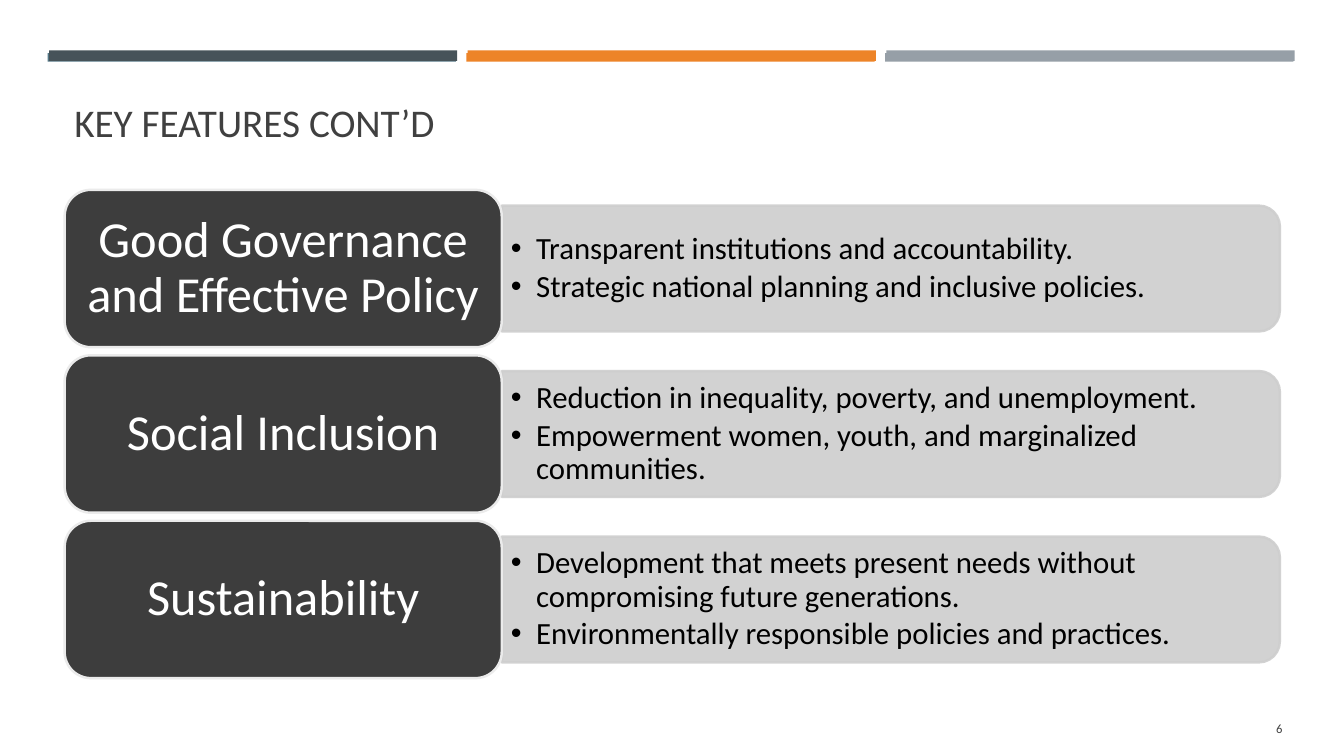
from dataclasses import dataclass

import lxml.etree
import pptx
import pptx.dml.color
import pptx.enum.shapes
import pptx.enum.text
import pptx.oxml.ns
import pptx.shapes.autoshape
import pptx.slide
import pptx.text.text
import pptx.util

Pt = pptx.util.Pt
RGBColor = pptx.dml.color.RGBColor
MSO_SHAPE = pptx.enum.shapes.MSO_SHAPE
PP_ALIGN = pptx.enum.text.PP_ALIGN
MSO_ANCHOR = pptx.enum.text.MSO_ANCHOR
qn = pptx.oxml.ns.qn

FONT = "Calibri"
TEAL = RGBColor(0x53, 0x76, 0x85)
SLATE = RGBColor(0x46, 0x53, 0x59)
ORANGE = RGBColor(0xED, 0x84, 0x28)
GREY = RGBColor(0x96, 0x9F, 0xA7)
INK = RGBColor(0x40, 0x40, 0x40)
CHARCOAL = RGBColor(0x3D, 0x3D, 0x3D)
PALE = RGBColor(0xEB, 0xEB, 0xEB)
SILVER = RGBColor(0xCE, 0xCE, 0xCE)
BLACK = RGBColor(0, 0, 0)
WHITE = RGBColor(255, 255, 255)

BAR_PITCH = 299.1
ROW_TOP = 135.6
ROW_PITCH = 118.2
ROW_HEIGHT = 112.4
LABEL_LEFT = 46.2
LABEL_WIDTH = 312.2
PANEL_LEFT = LABEL_LEFT + LABEL_WIDTH
PANEL_WIDTH = 555.8
PANEL_HEIGHT = 89.9
BULLETS_WIDTH = 551.5
BULLETS_HEIGHT = 81.4


@dataclass(frozen=True)
class Box:
    left: float
    top: float
    width: float
    height: float

    def emu(self) -> tuple[int, int, int, int]:
        return Pt(self.left), Pt(self.top), Pt(self.width), Pt(self.height)


@dataclass(frozen=True)
class Bar:
    back: RGBColor
    front: RGBColor


@dataclass(frozen=True)
class Feature:
    label: str
    bullets: tuple[str, ...]


BARS = (Bar(TEAL, SLATE), Bar(ORANGE, ORANGE), Bar(GREY, GREY))

FEATURES = (
    Feature("Good Governance and Effective Policy", (
        "Transparent institutions and accountability.",
        "Strategic national planning and inclusive policies.",
    )),
    Feature("Social Inclusion", (
        "Reduction in inequality, poverty, and unemployment.",
        "Empowerment women, youth, and marginalized communities.",
    )),
    Feature("Sustainability", (
        "Development that meets present needs without compromising future generations.",
        "Environmentally responsible policies and practices.",
    )),
)


def add_shape(s: pptx.slide.Slide, kind: MSO_SHAPE, box: Box, fill: RGBColor,
              line: RGBColor | None = None) -> pptx.shapes.autoshape.Shape:
    sp = s.shapes.add_shape(kind, *box.emu())
    sp.shadow.inherit = False
    sp.fill.solid()
    sp.fill.fore_color.rgb = fill
    if line is None:
        sp.line.fill.background()
    else:
        sp.line.color.rgb = line
        sp.line.width = Pt(1.75)
    return sp


def set_frame(tf: pptx.text.text.TextFrame, anchor: MSO_ANCHOR,
              inset_x: float = 7.2, inset_y: float = 3.6) -> None:
    tf.word_wrap = True
    tf.vertical_anchor = anchor
    tf.margin_left = tf.margin_right = Pt(inset_x)
    tf.margin_top = tf.margin_bottom = Pt(inset_y)


def add_run(p: pptx.text.text._Paragraph, text: str, size: float, color: RGBColor) -> None:
    r = p.add_run()
    r.text = text
    r.font.name = FONT
    r.font.size = Pt(size)
    r.font.color.rgb = color


def add_text(s: pptx.slide.Slide, box: Box, text: str, size: float,
             anchor: MSO_ANCHOR, align: PP_ALIGN) -> None:
    tf = s.shapes.add_textbox(*box.emu()).text_frame
    set_frame(tf, anchor)
    p = tf.paragraphs[0]
    p.alignment = align
    add_run(p, text, size, INK)


def add_bar(s: pptx.slide.Slide, index: int, bar: Bar) -> None:
    shift = index * BAR_PITCH
    add_shape(s, MSO_SHAPE.RECTANGLE, Box(34 + shift, 38, 291.6, 6), bar.back)
    add_shape(s, MSO_SHAPE.RECTANGLE, Box(35 + shift, 36, 291.6, 7.6), bar.front)


def add_panel(s: pptx.slide.Slide, middle: float) -> None:
    center = PANEL_LEFT + PANEL_WIDTH / 2
    box = Box(center - PANEL_HEIGHT / 2, middle - PANEL_WIDTH / 2, PANEL_HEIGHT, PANEL_WIDTH)
    sp = add_shape(s, MSO_SHAPE.ROUND_2_SAME_RECTANGLE, box, SILVER, SILVER)
    sp.rotation = 90
    for color in sp._element.spPr.iter(qn("a:srgbClr")):
        lxml.etree.SubElement(color, qn("a:alpha"), val="90000")


def add_bullets(s: pptx.slide.Slide, middle: float, bullets: tuple[str, ...]) -> None:
    box = Box(PANEL_LEFT, middle - BULLETS_HEIGHT / 2, BULLETS_WIDTH, BULLETS_HEIGHT)
    tf = s.shapes.add_textbox(*box.emu()).text_frame
    set_frame(tf, MSO_ANCHOR.MIDDLE, 6.6, 3.3)
    for i, text in enumerate(bullets):
        p = tf.paragraphs[0] if i == 0 else tf.add_paragraph()
        pPr = p._p.get_or_add_pPr()
        pPr.set("marL", str(Pt(18)))
        pPr.set("indent", str(-Pt(18)))
        lxml.etree.SubElement(pPr, qn("a:buFont"), typeface="Arial")
        lxml.etree.SubElement(pPr, qn("a:buChar"), char="•")
        p.line_spacing = 0.9
        p.space_after = Pt(3.3)
        add_run(p, text, 22, BLACK)


def add_label(s: pptx.slide.Slide, top: float, text: str) -> None:
    box = Box(LABEL_LEFT, top, LABEL_WIDTH, ROW_HEIGHT)
    sp = add_shape(s, MSO_SHAPE.ROUNDED_RECTANGLE, box, CHARCOAL, PALE)
    set_frame(sp.text_frame, MSO_ANCHOR.MIDDLE, 6, 5.4)
    p = sp.text_frame.paragraphs[0]
    p.alignment = PP_ALIGN.CENTER
    p.line_spacing = 0.9
    add_run(p, text, 36, WHITE)


def add_feature(s: pptx.slide.Slide, index: int, feature: Feature) -> None:
    top = ROW_TOP + index * ROW_PITCH
    middle = top + ROW_HEIGHT / 2
    add_panel(s, middle)
    add_bullets(s, middle, feature.bullets)
    add_label(s, top, feature.label)


def main() -> None:
    prs = pptx.Presentation()
    prs.slide_width, prs.slide_height = Pt(960), Pt(540)
    s = prs.slides.add_slide(prs.slide_layouts[6])
    for i, bar in enumerate(BARS):
        add_bar(s, i, bar)
    add_text(s, Box(46, 55.4, 868.3, 51.8), "KEY FEATURES CONT’D", 28,
             MSO_ANCHOR.BOTTOM, PP_ALIGN.LEFT)
    for i, feature in enumerate(FEATURES):
        add_feature(s, i, feature)
    add_text(s, Box(831, 506.2, 92.2, 28.8), "6", 9, MSO_ANCHOR.MIDDLE, PP_ALIGN.RIGHT)
    prs.save("out.pptx")


if __name__ == "__main__":
    main()
